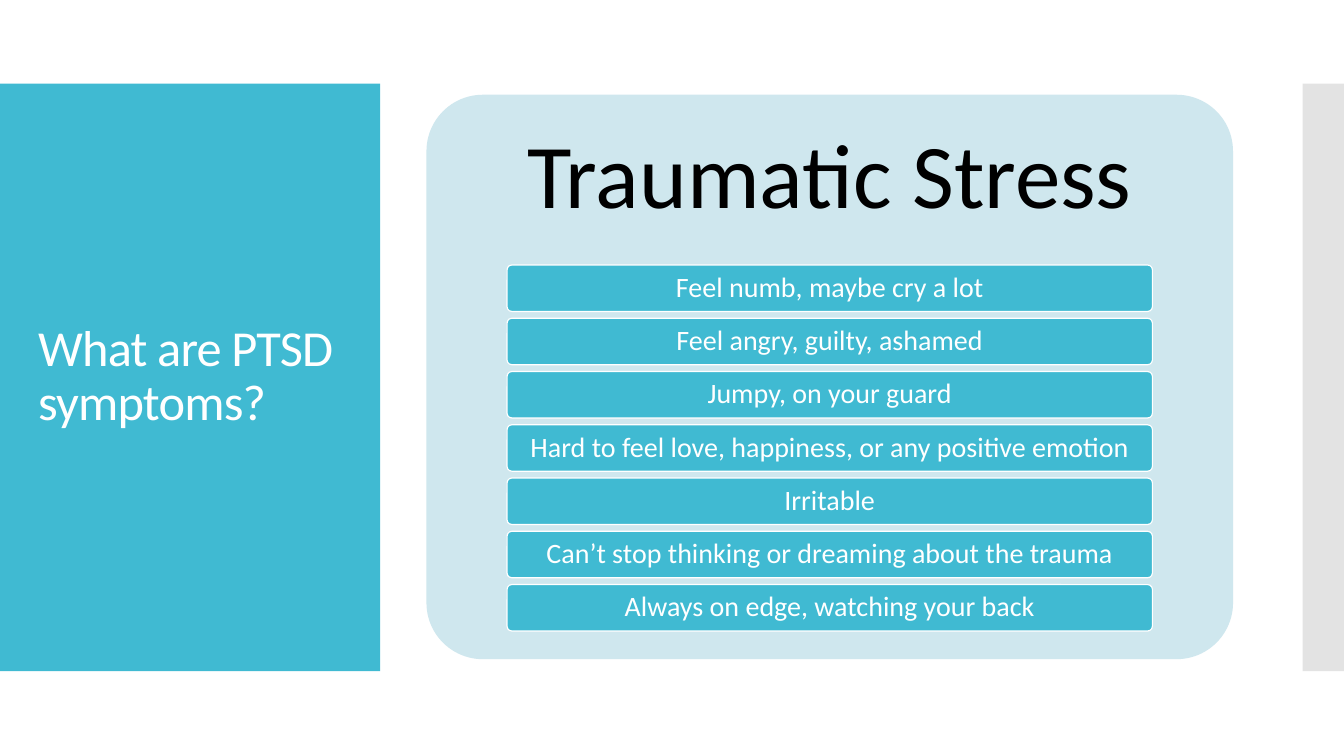
from dataclasses import dataclass

from lxml.etree import SubElement
from pptx import Presentation
from pptx.dml.color import RGBColor
from pptx.enum.shapes import MSO_SHAPE
from pptx.enum.text import MSO_ANCHOR, PP_ALIGN
from pptx.oxml.ns import qn
from pptx.util import Inches, Pt


@dataclass(frozen=True)
class Theme:
    """Colours, font and type sizes of the slide."""

    accent: str = "40BAD2"
    card: str = "CFE7EE"
    edge: str = "C8C8C8"
    light: str = "FFFFFF"
    dark: str = "000000"
    font: str = "Calibri"
    title_size: int = 36
    heading_size: int = 65
    symptom_size: int = 20


THEME = Theme()
SYMPTOMS = [
    "Feel numb, maybe cry a lot",
    "Feel angry, guilty, ashamed",
    "Jumpy, on your guard",
    "Hard to feel love, happiness, or any positive emotion",
    "Irritable",
    "Can’t stop thinking or dreaming about the trauma",
    "Always on edge, watching your back",
]
FIRST_BAR_TOP, LAST_BAR_TOP = 2.63, 5.8


def add_panel(slide, box, color, outline=None, rounded=False):
    """Add a filled rectangle, optionally rounded or outlined."""
    preset = MSO_SHAPE.ROUNDED_RECTANGLE if rounded else MSO_SHAPE.RECTANGLE
    panel = slide.shapes.add_shape(preset, *map(Inches, box))
    panel.shadow.inherit = False
    panel.fill.solid()
    panel.fill.fore_color.rgb = RGBColor.from_string(color)
    if rounded:
        panel.adjustments[0] = 0.1
    if outline:
        panel.line.color.rgb = RGBColor.from_string(outline)
        panel.line.width = Pt(0.85)
    else:
        panel.line.fill.background()
    return panel


def set_opacity(panel, percent):
    """Make the solid fill of a panel partly transparent."""
    color = panel.fill._xPr.find(qn("a:solidFill"))[0]
    SubElement(color, qn("a:alpha")).set("val", str(percent * 1000))


def write_text(holder, wording, size, color, insets, align=PP_ALIGN.CENTER):
    """Write one vertically centred paragraph and return it."""
    frame = holder.text_frame
    frame.word_wrap = True
    frame.vertical_anchor = MSO_ANCHOR.MIDDLE
    frame.margin_left = frame.margin_right = Inches(insets[0])
    frame.margin_top = frame.margin_bottom = Inches(insets[1])
    paragraph = frame.paragraphs[0]
    paragraph.text = wording
    paragraph.alignment = align
    paragraph.line_spacing = 0.9
    paragraph.font.name = THEME.font
    paragraph.font.size = Pt(size)
    paragraph.font.color.rgb = RGBColor.from_string(color)
    return paragraph


def add_title(slide):
    """Add the side panel with the slide's question."""
    add_panel(slide, (0, 0.83, 3.77, 5.83), THEME.accent)
    title = slide.shapes.add_textbox(*map(Inches, (0.28, 1.23, 3.22, 5.03)))
    question = write_text(title, "What are PTSD symptoms?", THEME.title_size,
                          THEME.light, (0.1, 0.05), PP_ALIGN.LEFT)
    question.runs[0]._r.get_or_add_rPr().set("spc", "-60")


def add_symptom_card(slide):
    """Add the card with its heading and evenly spaced symptom bars."""
    add_panel(slide, (4.23, 0.94, 8, 5.6), THEME.card, rounded=True)
    heading = slide.shapes.add_textbox(*map(Inches, (4.23, 0.94, 8, 1.68)))
    write_text(heading, "Traumatic Stress", THEME.heading_size, THEME.dark,
               (0.27, 0.27))
    step = (LAST_BAR_TOP - FIRST_BAR_TOP) / (len(SYMPTOMS) - 1)
    for row, symptom in enumerate(SYMPTOMS):
        bar = add_panel(slide, (5.03, FIRST_BAR_TOP + row * step, 6.4, 0.46),
                        THEME.accent, THEME.light, rounded=True)
        write_text(bar, symptom, THEME.symptom_size, THEME.light, (0.06, 0.04))


def main():
    """Build and save the slide."""
    deck = Presentation()
    deck.slide_width, deck.slide_height = Inches(13.33), Inches(7.5)
    slide = deck.slides.add_slide(deck.slide_layouts[6])
    add_title(slide)
    edge = add_panel(slide, (12.92, 0.83, 0.41, 5.83), THEME.edge)
    set_opacity(edge, 50)
    add_symptom_card(slide)
    deck.save("out.pptx")


if __name__ == "__main__":
    main()
